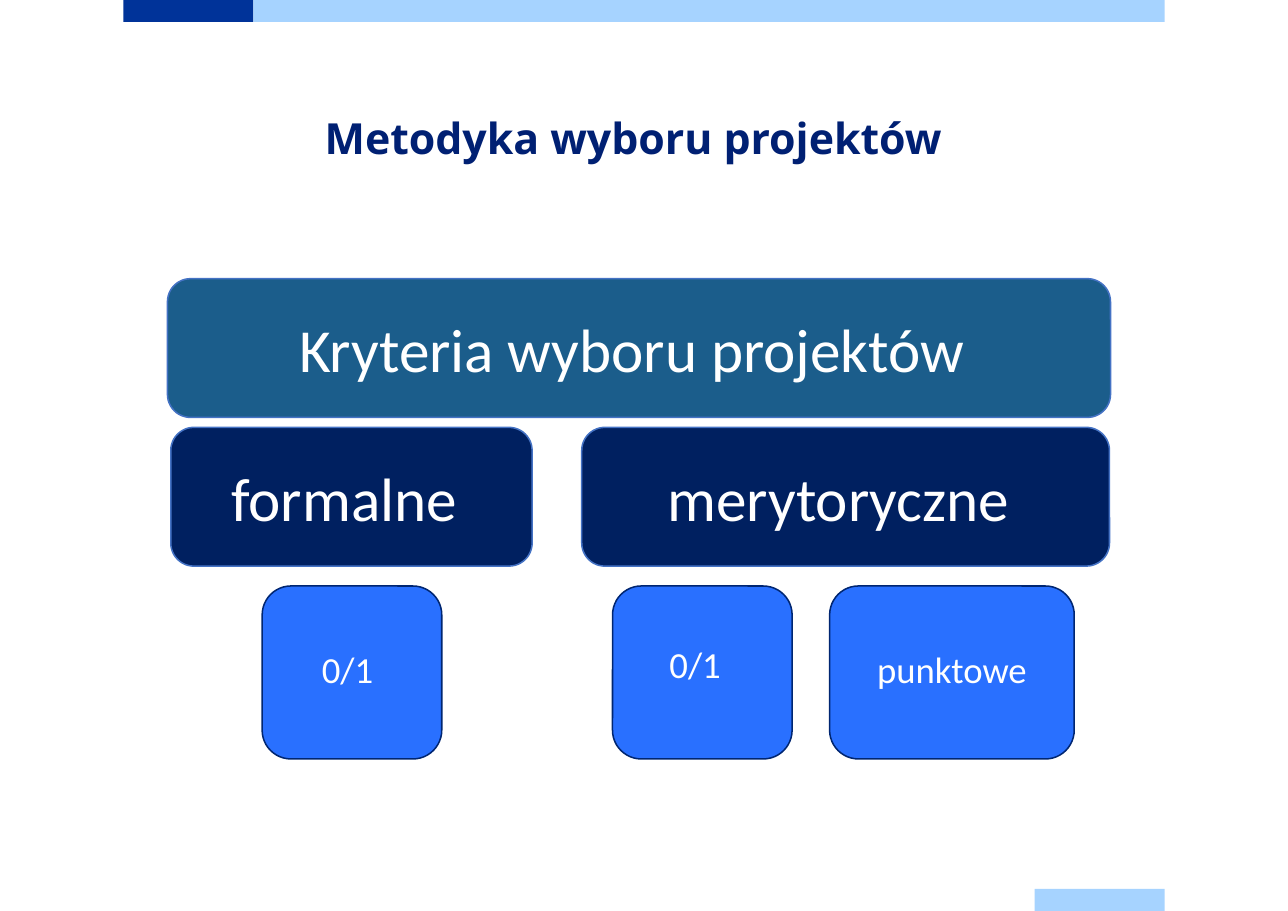
from pptx import Presentation
from pptx.dml.color import RGBColor
from pptx.enum.shapes import MSO_SHAPE as Shape
from pptx.enum.text import MSO_ANCHOR as Anchor, PP_ALIGN as Align
from pptx.util import Inches, Pt

WHITE = RGBColor(0xFF, 0xFF, 0xFF)
ROYAL = RGBColor(0x00, 0x33, 0x99)
SKY = RGBColor(0xA6, 0xD3, 0xFF)
TITLE_NAVY = RGBColor(0x00, 0x20, 0x73)
TEAL = RGBColor(0x1B, 0x5D, 0x8B)
NAVY = RGBColor(0x00, 0x20, 0x60)
BLUE = RGBColor(0x29, 0x70, 0xFF)
BLUE_EDGE = RGBColor(0x00, 0x26, 0x71)
STEEL = RGBColor(0x44, 0x72, 0xC4)


class CriteriaSlide:
    title_font = "Open Sans"
    body_font = "Calibri"

    def __init__(self, deck):
        self.slide = deck.slides.add_slide(deck.slide_layouts[5])

    def place(self, kind, box, fill):
        shape = self.slide.shapes.add_shape(kind, *map(Inches, box))
        shape.shadow.inherit = False
        shape.fill.solid()
        shape.fill.fore_color.rgb = fill
        return shape

    def label(self, shape, text, font, size, color, anchor, insets, bold=False):
        frame = shape.text_frame
        frame.word_wrap = True
        frame.vertical_anchor = anchor
        (frame.margin_left, frame.margin_top,
         frame.margin_right, frame.margin_bottom) = map(Inches, insets)
        paragraph = frame.paragraphs[0]
        paragraph.text = text
        paragraph.alignment = Align.CENTER
        paragraph.font.name = font
        paragraph.font.size = Pt(size)
        paragraph.font.bold = bold
        paragraph.font.color.rgb = color
        return paragraph

    def bar(self, box, fill):
        self.place(Shape.RECTANGLE, box, fill).line.fill.background()

    def title(self, text, box):
        holder = self.slide.shapes.title
        holder.left, holder.top, holder.width, holder.height = map(Inches, box)
        heading = self.label(holder, text, self.title_font, 28, TITLE_NAVY,
                             Anchor.TOP, (0, 0, 0.2, 0), bold=True)
        heading.line_spacing = Pt(36)

    def card(self, text, box, fill, edge, size, insets):
        card = self.place(Shape.ROUNDED_RECTANGLE, box, fill)
        card.line.color.rgb = edge
        card.line.width = Pt(1)
        return self.label(card, text, self.body_font, size, WHITE,
                          Anchor.MIDDLE, insets)

    def group(self, text, left, top, width, fill):
        self.card(text, (left, top, width, 1.26), fill, STEEL, 40,
                  (0.1, 0.05, 0.23, 0.05))

    def score(self, text, left, width, insets):
        caption = self.card(text, (left, 5.32, width, 1.57), BLUE, BLUE_EDGE,
                            24, insets)
        caption.line_spacing = Pt(24)


def main():
    deck = Presentation()
    deck.slide_width, deck.slide_height = Inches(11.69), Inches(8.27)
    page = CriteriaSlide(deck)

    page.bar((1.12, 0, 1.18, 0.2), ROYAL)
    page.bar((2.3, 0, 8.27, 0.2), SKY)
    page.bar((9.39, 8.07, 1.18, 0.2), SKY)
    page.title("Metodyka wyboru projektów", (1.12, 0.98, 9.45, 0.82))

    page.group("Kryteria wyboru projektów", 1.52, 2.53, 8.56, TEAL)
    page.group("formalne", 1.55, 3.88, 3.28, NAVY)
    page.group("merytoryczne", 5.28, 3.88, 4.79, NAVY)

    page.score("0/1", 2.38, 1.63, (0, 0, 0.08, 0))
    page.score("0/1", 5.56, 1.63, (0, 0, 0.13, 0.09))
    page.score("punktowe", 7.53, 2.22, (0.1, 0.05, 0.1, 0.05))

    deck.save("out.pptx")


if __name__ == "__main__":
    main()
